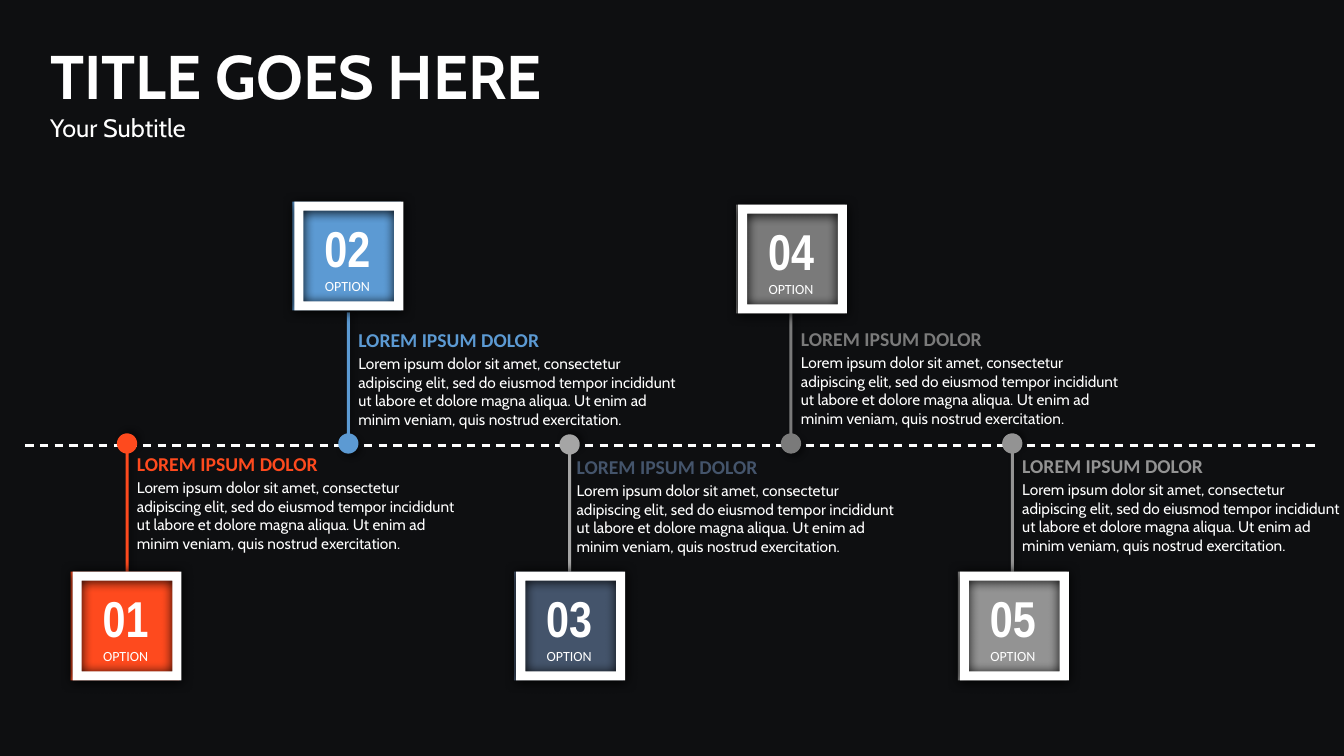
import math

from lxml import etree
from pptx import Presentation
from pptx.dml.color import RGBColor
from pptx.enum.dml import MSO_LINE
from pptx.enum.shapes import MSO_CONNECTOR, MSO_SHAPE
from pptx.enum.text import MSO_AUTO_SIZE, PP_ALIGN
from pptx.oxml.ns import qn
from pptx.util import Inches, Pt

DASH = MSO_LINE.DASH
STRAIGHT = MSO_CONNECTOR.STRAIGHT
RECT, FRAME = MSO_SHAPE.RECTANGLE, MSO_SHAPE.FRAME
GROW = MSO_AUTO_SIZE.SHAPE_TO_FIT_TEXT
LEFT, CENTER = PP_ALIGN.LEFT, PP_ALIGN.CENTER

WHITE = "FFFFFF"
BACKGROUND = "0E0F11"
HEADING = "LOREM IPSUM DOLOR"
BODY = ("Lorem ipsum dolor sit amet, consectetur adipiscing elit, sed do eiusmod "
        "tempor incididunt ut labore et dolore magna aliqua. Ut enim ad minim "
        "veniam, quis nostrud exercitation.")

FIRST_X, PIN_STEP, CARD_STEP = 1.26, 2.195, 2.2
CARD, BORDER = 1.08, 0.09
RADIUS, STEM, STEM_HALF = 0.1, 1.3, 0.015

# card colour, pin colour, stem direction, pin y, card top, text shift, text top
OPTIONS = [
    ("FE4A1E", "FE4A1E", 1, 4.4, 5.67, 0, 4.43),
    ("5C9AD3", "5C9AD3", -1, 4.4, 2, 0, 3.2),
    ("44546B", "A5A5A5", 1, 4.41, 5.67, -0.03, 4.46),
    ("7A7A7A", "7A7A7A", -1, 4.4, 2.03, 0, 3.19),
    ("939393", "939393", 1, 4.4, 5.67, 0, 4.45),
]


def rgb(color):
    """Turn a hex string into a colour."""
    return RGBColor.from_string(color)


def paint(sp, color):
    """Give a shape a plain fill with no line and no shadow."""
    sp.fill.solid()
    sp.fill.fore_color.rgb = rgb(color)
    sp.line.fill.background()
    sp.shadow.inherit = False


def add_shadow(sp, blur, dist, angle, alpha):
    """Add a black outer shadow to a painted shape."""
    effects = sp._element.spPr.find(qn("a:effectLst"))
    shadow = etree.SubElement(effects, qn("a:outerShdw"), blurRad=str(Pt(blur)),
                              dist=str(Pt(dist)), dir=str(angle * 60000),
                              algn="ctr", rotWithShape="0")
    black = etree.SubElement(shadow, qn("a:srgbClr"), val="000000")
    etree.SubElement(black, qn("a:alpha"), val=str(alpha * 1000))


def add_box(shapes, x, y, w, h, inset_x=0.1, inset_y=0.05):
    """Add a wrapping text box and return its text frame."""
    tf = shapes.add_textbox(Inches(x), Inches(y), Inches(w), Inches(h)).text_frame
    tf.word_wrap = True
    tf.auto_size = GROW
    tf.margin_left = tf.margin_right = Inches(inset_x)
    tf.margin_top = tf.margin_bottom = Inches(inset_y)
    return tf


def write(tf, text, size, font, color=WHITE, bold=False, align=LEFT, before=None):
    """Write one paragraph, using the empty first one when there is one."""
    p = tf.paragraphs[0] if not tf.text else tf.add_paragraph()
    p.alignment = align
    if before is not None:
        p.space_before = Pt(before)
    r = p.add_run()
    r.text = text
    r.font.size = Pt(size)
    r.font.name = font
    r.font.bold = bold
    r.font.color.rgb = rgb(color)


def add_title(s, x, y, w, h):
    """Place the title and the subtitle."""
    tf = add_box(s.shapes, x, y, w, h)
    write(tf, "TITLE GOES HERE", 44, "Cabin", bold=True)
    write(tf, "Your Subtitle", 18, "Cabin")


def add_axis(s, x, y, w):
    """Draw the dashed timeline."""
    axis = s.shapes.add_connector(STRAIGHT, Inches(x), Inches(y),
                                  Inches(x + w), Inches(y))
    axis.line.color.rgb = rgb(WHITE)
    axis.line.width = Pt(1.5)
    axis.line.dash_style = DASH
    etree.SubElement(axis._element.spPr, qn("a:effectLst"))


def add_pin(s, x, y, direction, color):
    """Draw a dot centred at x, y with a stem going up (-1) or down (1)."""
    gap = math.asin(STEM_HALF / RADIUS)
    steps = 48
    angles = [gap + (2 * math.pi - 2 * gap) * i / steps for i in range(steps + 1)]
    points = [(x + RADIUS * math.sin(a), y + direction * RADIUS * math.cos(a))
              for a in angles]
    tip = y + direction * STEM
    points.append((x - STEM_HALF, tip))
    builder = s.shapes.build_freeform(Inches(x + STEM_HALF), Inches(tip))
    builder.add_line_segments([(Inches(px), Inches(py)) for px, py in points])
    pin = builder.convert_to_shape()
    paint(pin, color)
    add_shadow(pin, 4, 3, 45 if direction < 0 else 315, 40)


def add_card(s, x, y, number, color):
    """Place a framed square with its option number."""
    shapes = s.shapes.add_group_shape().shapes
    size = Inches(CARD)
    square = shapes.add_shape(RECT, Inches(x - 0.02), Inches(y), size, size)
    paint(square, color)
    frame = shapes.add_shape(FRAME, Inches(x), Inches(y), size, size)
    frame.adjustments[0] = BORDER / CARD
    paint(frame, WHITE)
    add_shadow(frame, 8.5, 1, 90, 100)
    tf = add_box(shapes, x + 0.15, y + 0.12, 0.75, 0.84, 0.07, 0.03)
    write(tf, f"{number:02d}", 36, "Arial Narrow", bold=True, align=CENTER)
    write(tf, "OPTION", 10, "Calibri", align=CENTER)


def add_description(s, x, y, color):
    """Place a coloured heading over its body text."""
    tf = add_box(s.shapes, x, y, 3.39, 1.11)
    write(tf, HEADING, 14, "Calibri", color, bold=True)
    write(tf, BODY, 11, "Cabin", before=2.4)


def add_timeline(s, x, y, w):
    """Place the axis with its pins, cards and descriptions."""
    add_axis(s, x, y, w)
    for i, (_, color, direction, pin_y, *_) in enumerate(OPTIONS):
        add_pin(s, FIRST_X + i * PIN_STEP, pin_y, direction, color)
    for i, (color, _, _, _, top, shift, text_top) in enumerate(OPTIONS):
        add_card(s, FIRST_X - CARD / 2 + i * CARD_STEP, top, i + 1, color)
        add_description(s, FIRST_X + i * PIN_STEP + shift, text_top, color)


def main():
    """Build the slide and save it."""
    prs = Presentation()
    prs.slide_width, prs.slide_height = Inches(13.33), Inches(7.5)
    s = prs.slides.add_slide(prs.slide_layouts[6])
    s.background.fill.solid()
    s.background.fill.fore_color.rgb = rgb(BACKGROUND)
    add_title(s, 0.4, 0.33, 6.5, 1.14)
    add_timeline(s, 0.25, 4.42, 12.8)
    prs.save("out.pptx")


if __name__ == "__main__":
    main()
